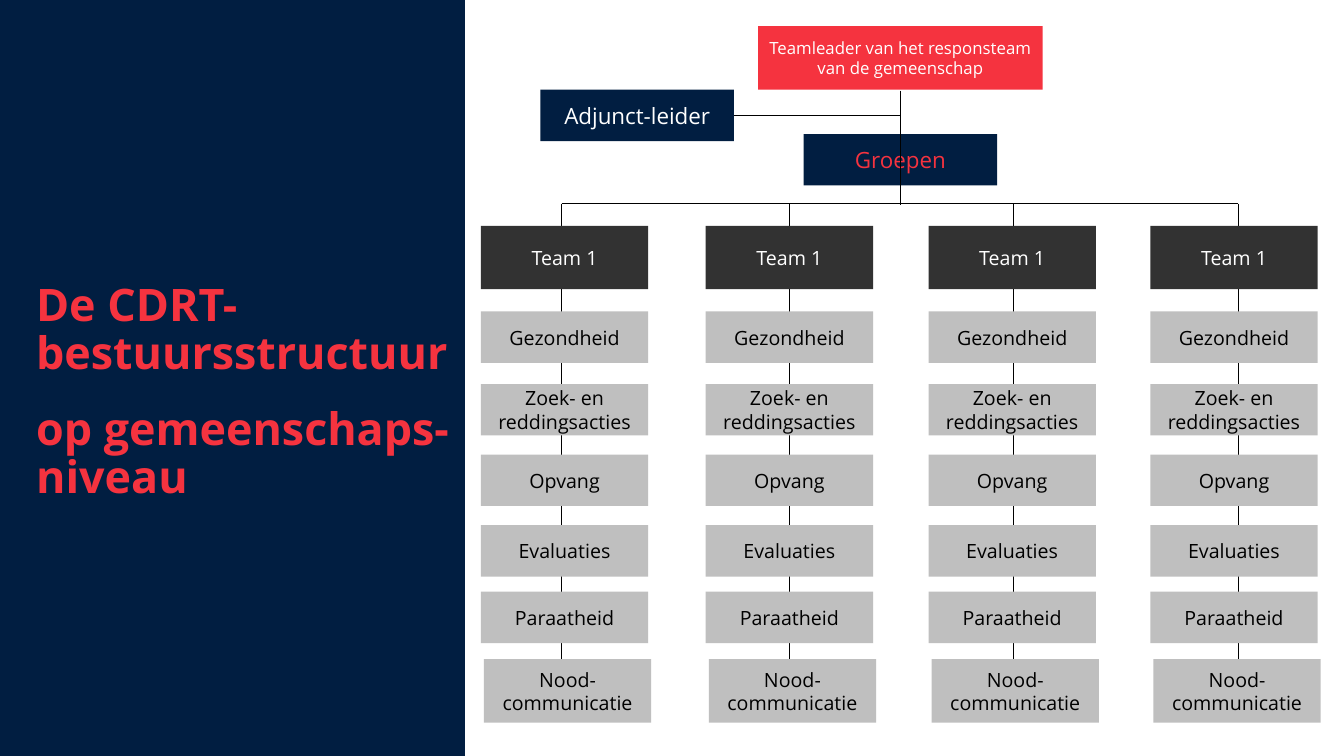
from lxml import etree
from pptx import Presentation
from pptx.dml.color import RGBColor
from pptx.enum.shapes import MSO_CONNECTOR, MSO_SHAPE
from pptx.enum.text import MSO_ANCHOR, PP_ALIGN
from pptx.oxml.ns import qn
from pptx.util import Inches, Pt

STRAIGHT = MSO_CONNECTOR.STRAIGHT
RECT = MSO_SHAPE.RECTANGLE
MIDDLE = MSO_ANCHOR.MIDDLE
CENTER = PP_ALIGN.CENTER

COLORS = {
    "navy": "011E41",
    "red": "F5333F",
    "dark": "323232",
    "grey": "BFBFBF",
    "white": "FFFFFF",
    "black": "000000",
}
WIDTH, HEIGHT = 13.33, 7.5
TITLE = "De CDRT-bestuursstructuur \vop gemeenschaps-niveau"

TEAM_COLUMNS = [(4.77, 5.57), (7.0, 7.83), (9.21, 10.05), (11.41, 12.28)]
TEAM_WIDTH = 1.66
TALL, LOW = 0.63, 0.51
BUS_Y = 2.02
STEM_END = 6.76
TRUNK_X = 8.93

TEAM_ROWS = [
    ("Team 1", 2.24, TALL, 0, "dark", "white"),
    ("Gezondheid", 3.09, LOW, 0, "grey", "black"),
    ("Zoek- en reddingsacties", 3.81, LOW, 0, "grey", "black"),
    ("Opvang", 4.51, LOW, 0, "grey", "black"),
    ("Evaluaties", 5.21, LOW, 0, "grey", "black"),
    ("Paraatheid", 5.87, LOW, 0, "grey", "black"),
    ("Nood-communicatie", 6.54, TALL, 0.03, "grey", "black"),
]
LEADERS = [
    ("Adjunct-leider", (5.36, 0.89, 1.92, LOW), "navy", "white", 16),
    ("Teamleader van het responsteam van de gemeenschap",
     (7.52, 0.26, 2.82, TALL), "red", "white", 12),
    ("Groepen", (7.97, 1.33, 1.92, LOW), "navy", "red", 16),
]
LEADER_LINES = [
    (TRUNK_X, 0.9, TRUNK_X, BUS_Y + 0.01),
    (TEAM_COLUMNS[0][1], BUS_Y, TEAM_COLUMNS[-1][1], BUS_Y),
    (7.28, 1.15, TRUNK_X, 1.15),
]


def color(name):
    return RGBColor.from_string(COLORS[name])


def write(s, text, ink, size, bold=False):
    tf = s.text_frame
    tf.word_wrap = True
    tf.vertical_anchor = MIDDLE
    p = tf.paragraphs[0]
    p.text = text
    for r in p.runs:
        for name, value in {"name": "Open Sans", "size": Pt(size), "bold": bold}.items():
            setattr(r.font, name, value)
        r.font.color.rgb = color(ink)
    return p


def add_box(slide, area, fill):
    s = slide.shapes.add_shape(RECT, *map(Inches, area))
    s.shadow.inherit = False
    s.fill.solid()
    s.fill.fore_color.rgb = color(fill)
    s.line.fill.background()
    return s


def add_label_box(slide, text, area, fill, ink, size):
    p = write(add_box(slide, area, fill), text, ink, size)
    p.alignment = CENTER


def add_line(slide, ends):
    line = slide.shapes.add_connector(STRAIGHT, *map(Inches, ends))
    line.line.color.rgb = color("black")
    line.line.width = Pt(0.75)
    etree.SubElement(line._element.spPr, qn("a:effectLst"))


def add_title(slide):
    add_box(slide, (0, 0, 4.61, HEIGHT), "navy")
    s = slide.shapes.add_textbox(*map(Inches, (0.26, 1.44, 4.34, 4.92)))
    p = write(s, TITLE, "red", 32, True)
    p.line_spacing = 0.9


def add_team(slide, left, stem_x):
    add_line(slide, (stem_x, BUS_Y, stem_x, STEM_END))
    for text, top, height, shift, fill, ink in TEAM_ROWS:
        area = (left + shift, top, TEAM_WIDTH, height)
        add_label_box(slide, text, area, fill, ink, 14)


def main():
    prs = Presentation()
    prs.slide_width = Inches(WIDTH)
    prs.slide_height = Inches(HEIGHT)
    slide = prs.slides.add_slide(prs.slide_layouts[6])
    add_title(slide)
    for left, stem_x in TEAM_COLUMNS:
        add_team(slide, left, stem_x)
    for leader in LEADERS:
        add_label_box(slide, *leader)
    for ends in LEADER_LINES:
        add_line(slide, ends)
    prs.save("out.pptx")


if __name__ == "__main__":
    main()
